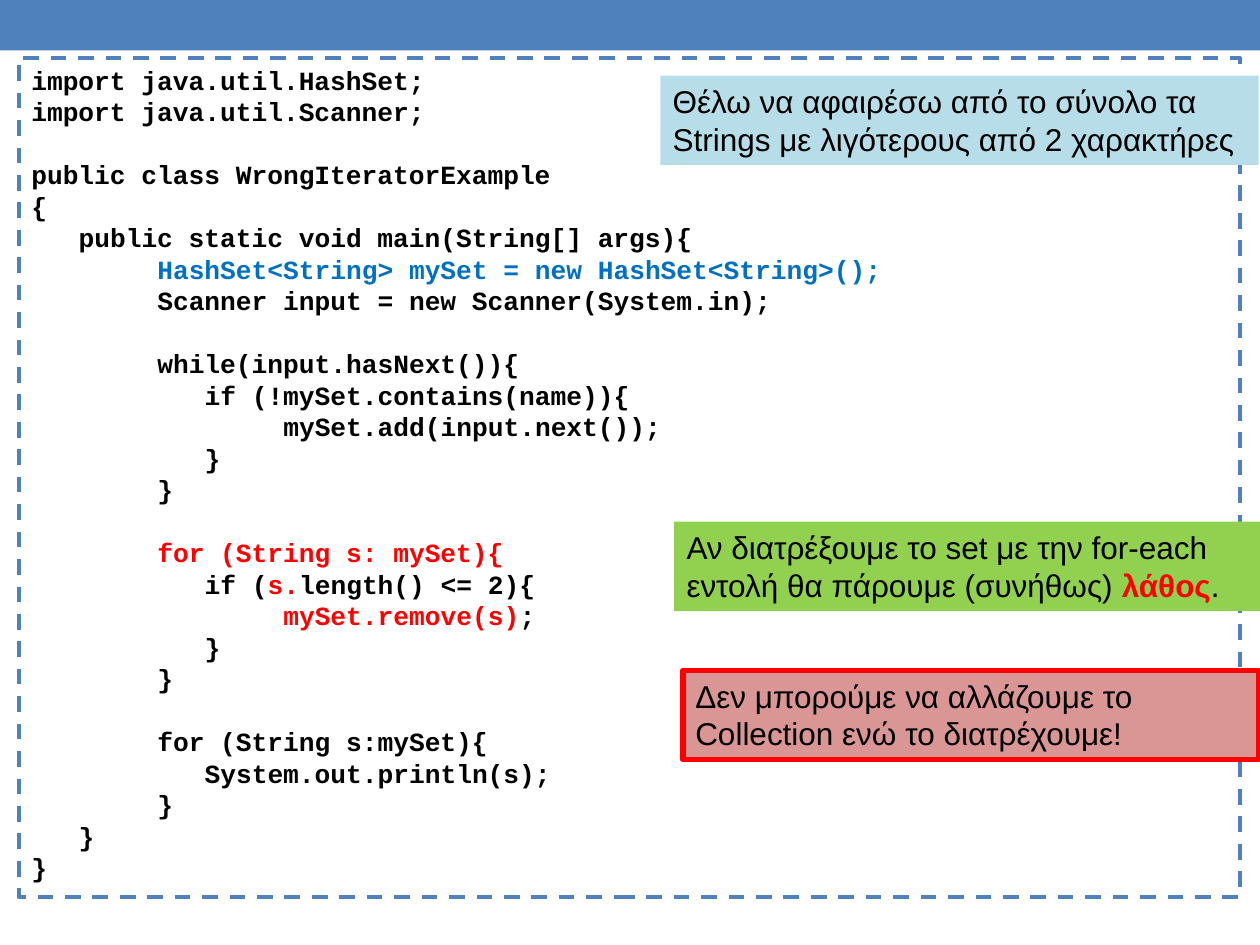
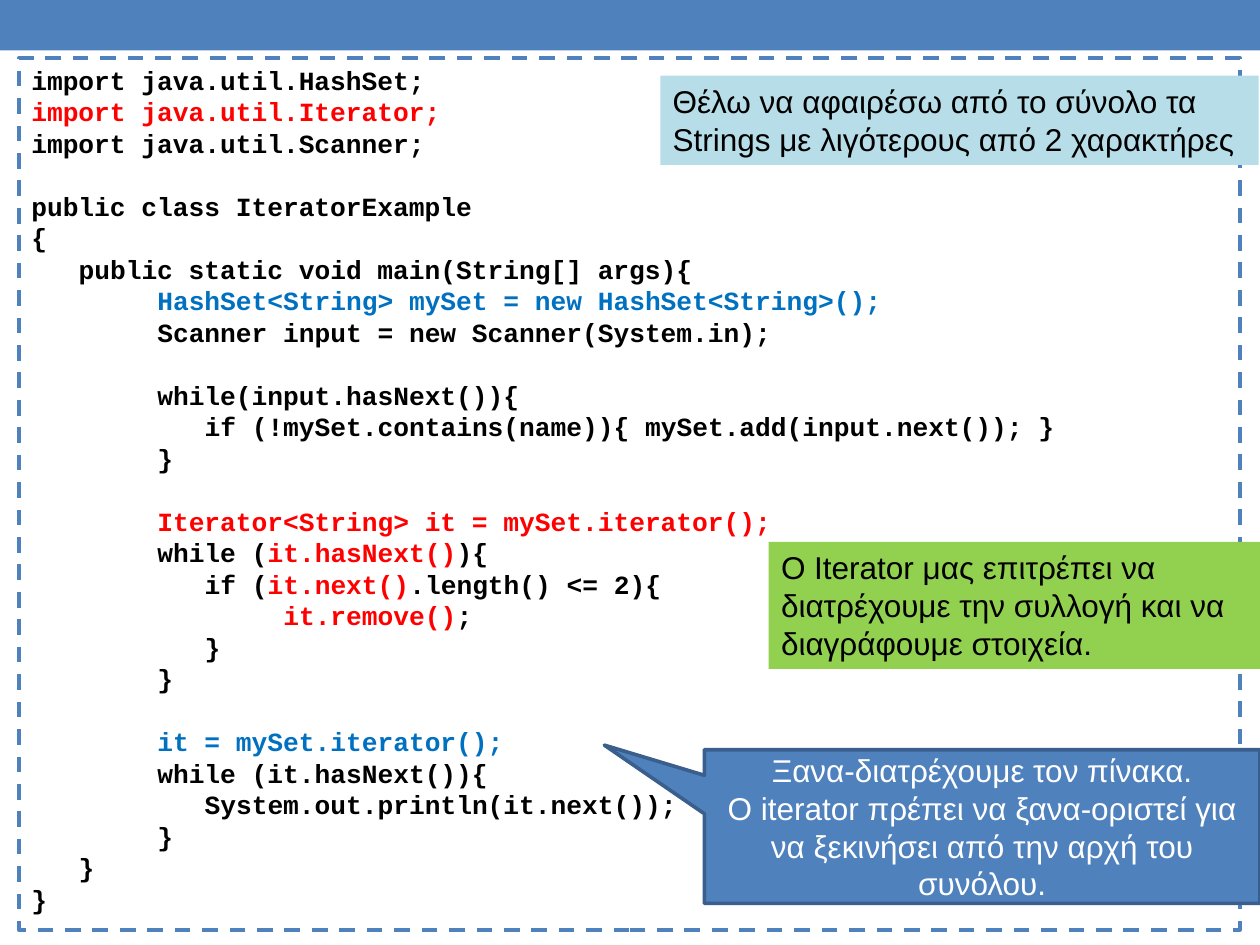
from dataclasses import dataclass
from typing import NamedTuple, Optional

import pptx
import pptx.dml.color
import pptx.enum.dml
import pptx.enum.shapes
import pptx.enum.text
import pptx.util

Inches = pptx.util.Inches
Pt = pptx.util.Pt
Shape = pptx.enum.shapes.MSO_SHAPE
Align = pptx.enum.text.PP_ALIGN
Anchor = pptx.enum.text.MSO_ANCHOR

COLORS = {
    "blue": "4F81BD",
    "dark_blue": "3A5F8C",
    "code_blue": "0070C0",
    "red": "FF0000",
    "rose": "D99694",
    "green": "92D050",
    "pale_blue": "B7DEE8",
    "black": "000000",
    "white": "FFFFFF",
}
CODE_SIZE = 15
NOTE_SIZE = 18
LINE_HEIGHT = 1.2

# Code indents: a tab is one inch, a half step is three characters
HALF = 0.375
TAB = 1.0


class Run(NamedTuple):
    text: str
    color: str = "black"
    bold: bool = False


class Line(NamedTuple):
    indent: float
    runs: list[Run]
    gap: bool = False


@dataclass
class Box:
    left: float
    top: float
    width: float
    height: float
    fill: Optional[str] = None
    line: Optional[str] = None
    line_width: float = 0
    dashed: bool = False
    preset: Shape = Shape.RECTANGLE


@dataclass
class Note:
    box: Box
    paragraphs: list[list[Run]]
    centered: bool = False
    adjustments: tuple[float, ...] = ()


def code(indent: float, text: str, color: str = "black", gap: bool = False) -> Line:
    """A code line in one colour."""
    return Line(indent, [Run(text, color)], gap)


def rgb(name: str) -> pptx.dml.color.RGBColor:
    return pptx.dml.color.RGBColor.from_string(COLORS[name])


def add_box(slide, box: Box):
    sp = slide.shapes.add_shape(box.preset, Inches(box.left), Inches(box.top),
                                Inches(box.width), Inches(box.height))
    sp.shadow.inherit = False
    if box.fill:
        sp.fill.solid()
        sp.fill.fore_color.rgb = rgb(box.fill)
    else:
        sp.fill.background()
    if box.line:
        sp.line.color.rgb = rgb(box.line)
        sp.line.width = Pt(box.line_width)
        if box.dashed:
            sp.line.dash_style = pptx.enum.dml.MSO_LINE.DASH
    else:
        sp.line.fill.background()
    sp.text_frame.word_wrap = True
    sp.text_frame.vertical_anchor = Anchor.TOP
    return sp


def next_paragraph(tf, index: int):
    return tf.paragraphs[0] if index == 0 else tf.add_paragraph()


def write_runs(p, runs: list[Run], font: str, size: int) -> None:
    p.font.name = font
    p.font.size = Pt(size)
    p.line_spacing = Pt(size * LINE_HEIGHT)
    for run in runs:
        r = p.add_run()
        r.text = run.text
        r.font.name = font
        r.font.size = Pt(size)
        r.font.bold = run.bold
        r.font.color.rgb = rgb(run.color)


def add_code(slide, height: float, lines: list[Line]) -> None:
    frame = Box(0.15, 0.46, 9.69, height, line="blue", line_width=2.25, dashed=True)
    tf = add_box(slide, frame).text_frame
    for i, line in enumerate(lines):
        p = next_paragraph(tf, i)
        p.alignment = Align.LEFT
        p._p.get_or_add_pPr().set("marL", str(Inches(line.indent)))
        if line.gap:
            p.space_before = Pt(CODE_SIZE * LINE_HEIGHT)
        runs = [run._replace(bold=True) for run in line.runs]
        write_runs(p, runs, "Courier New", CODE_SIZE)


def add_note(slide, note: Note) -> None:
    sp = add_box(slide, note.box)
    for i, value in enumerate(note.adjustments):
        sp.adjustments[i] = value
    tf = sp.text_frame
    if note.centered:
        tf.vertical_anchor = Anchor.MIDDLE
    for i, runs in enumerate(note.paragraphs):
        p = next_paragraph(tf, i)
        p.alignment = Align.CENTER if note.centered else Align.LEFT
        write_runs(p, runs, "Arial", NOTE_SIZE)


def add_code_slide(prs, height: float, lines: list[Line], notes: list[Note]) -> None:
    slide = prs.slides.add_slide(prs.slide_layouts[6])
    add_box(slide, Box(0, 0, 10, 0.4, fill="blue"))
    add_code(slide, height, lines)
    for note in [GOAL_NOTE, *notes]:
        add_note(slide, note)


def class_opening(name: str) -> list[Line]:
    """The lines from the class header to the start of the input loop."""
    return [
        code(0, f"public class {name}", gap=True),
        code(0, "{"),
        code(HALF, "public static void main(String[] args){"),
        code(TAB, "HashSet<String> mySet = new HashSet<String>();", "code_blue"),
        code(TAB, "Scanner input = new Scanner(System.in);"),
        code(TAB, "while(input.hasNext()){", gap=True),
    ]


IMPORT_SET = code(0, "import java.util.HashSet;")
IMPORT_SCANNER = code(0, "import java.util.Scanner;")
END_IF = code(TAB + HALF, "}")
END_LOOP = code(TAB, "}")
END_CLASS = [END_LOOP, code(HALF, "}"), code(0, "}")]

WRONG_EXAMPLE = [
    IMPORT_SET,
    IMPORT_SCANNER,
    *class_opening("WrongIteratorExample"),
    code(TAB + HALF, "if (!mySet.contains(name)){"),
    code(2 * TAB, "mySet.add(input.next());"),
    END_IF,
    END_LOOP,
    code(TAB, "for (String s: mySet){", "red", gap=True),
    Line(TAB + HALF, [Run("if ("), Run("s.", "red"), Run("length() <= 2){")]),
    Line(2 * TAB, [Run("mySet.remove(s)", "red"), Run(";")]),
    END_IF,
    END_LOOP,
    code(TAB, "for (String s:mySet){", gap=True),
    code(TAB + HALF, "System.out.println(s);"),
    *END_CLASS,
]

ITERATOR_EXAMPLE = [
    IMPORT_SET,
    code(0, "import java.util.Iterator;", "red"),
    IMPORT_SCANNER,
    *class_opening("IteratorExample"),
    code(TAB + HALF, "if (!mySet.contains(name)){ mySet.add(input.next()); }"),
    END_LOOP,
    code(TAB, "Iterator<String> it = mySet.iterator();", "red", gap=True),
    Line(TAB, [Run("while ("), Run("it.hasNext()", "red"), Run("){")]),
    Line(TAB + HALF, [Run("if ("), Run("it.next()", "red"), Run(".length() <= 2){")]),
    Line(2 * TAB, [Run("it.remove()", "red"), Run(";")]),
    END_IF,
    END_LOOP,
    code(TAB, "it = mySet.iterator();", "code_blue", gap=True),
    code(TAB, "while (it.hasNext()){"),
    code(TAB + HALF, "System.out.println(it.next());"),
    *END_CLASS,
]

GOAL_NOTE = Note(
    Box(5.24, 0.6, 4.75, 0.71, fill="pale_blue"),
    [[Run("Θέλω να αφαιρέσω από το σύνολο τα Strings με λιγότερους από 2 χαρακτήρες")]],
)
WRONG_NOTES = [
    Note(
        Box(5.35, 4.14, 4.65, 0.71, fill="green"),
        [[Run("Αν διατρέξουμε το set με την for-each εντολή θα πάρουμε (συνήθως) "),
          Run("λάθος", "red", True), Run(".")]],
    ),
    Note(
        Box(5.42, 5.32, 4.57, 0.71, fill="rose", line="red", line_width=3),
        [[Run("Δεν μπορούμε να αλλάζουμε το Collection ενώ το διατρέχουμε!")]],
    ),
]
ITERATOR_NOTES = [
    Note(
        Box(6.1, 4.3, 3.95, 1.01, fill="green"),
        [[Run("Ο Iterator μας επιτρέπει να διατρέχουμε την συλλογή και να "
              "διαγράφουμε στοιχεία.")]],
    ),
    Note(
        Box(5.59, 5.95, 4.41, 1.22, fill="blue", line="dark_blue", line_width=2.08,
            preset=Shape.RECTANGULAR_CALLOUT),
        [[Run("Ξανα-διατρέχουμε τον πίνακα.", "white")],
         [Run("Ο iterator πρέπει να ξανα-οριστεί για να ξεκινήσει από την αρχή "
              "του συνόλου.", "white")]],
        centered=True,
        adjustments=(-0.68, -0.53),
    ),
]


def main() -> None:
    prs = pptx.Presentation()
    prs.slide_width = Inches(10)
    prs.slide_height = Inches(7.5)
    add_code_slide(prs, 6.66, WRONG_EXAMPLE, WRONG_NOTES)
    add_code_slide(prs, 6.92, ITERATOR_EXAMPLE, ITERATOR_NOTES)
    prs.save("out.pptx")


if __name__ == "__main__":
    main()
